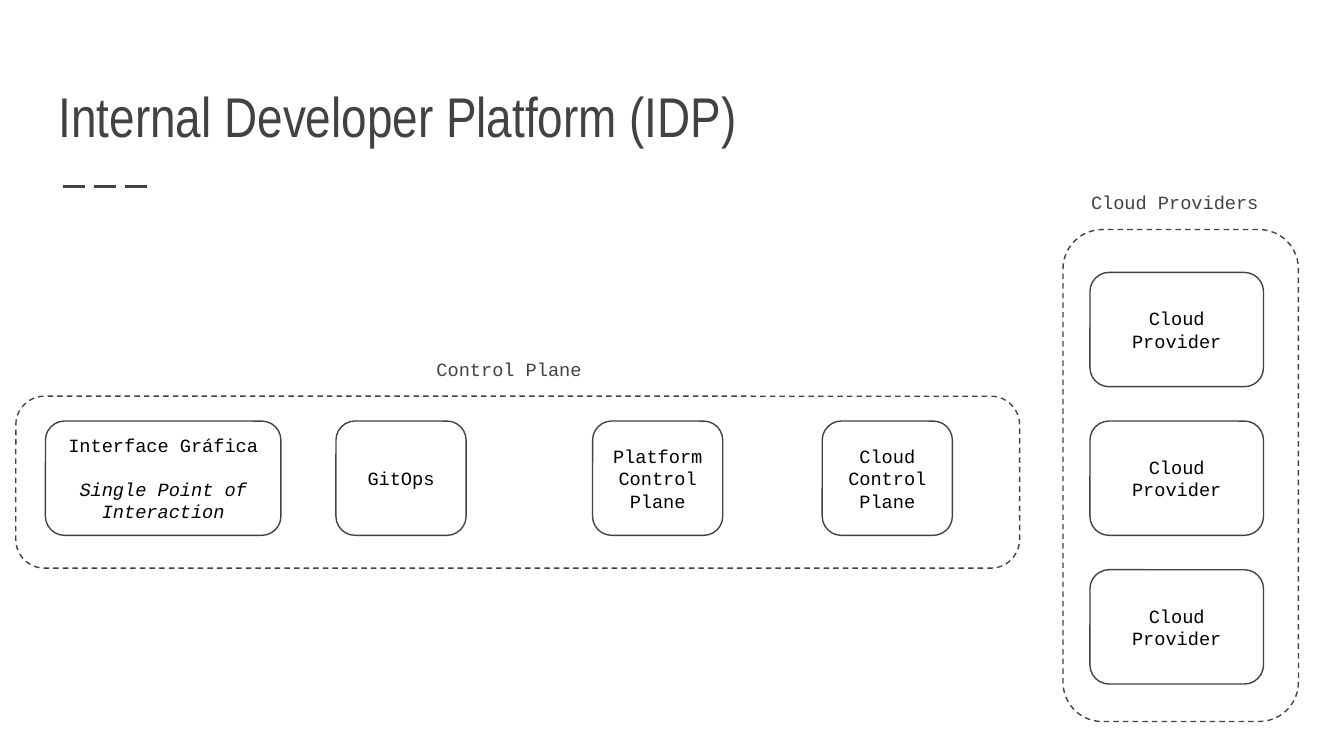
from dataclasses import dataclass

import pptx
import pptx.dml.color
import pptx.enum.dml
import pptx.enum.shapes
import pptx.enum.text
import pptx.oxml.ns
import pptx.shapes.autoshape
import pptx.slide
import pptx.text.text
import pptx.util
from lxml import etree

Cm = pptx.util.Cm
Pt = pptx.util.Pt
Color = pptx.dml.color.RGBColor
Align = pptx.enum.text.PP_ALIGN
Anchor = pptx.enum.text.MSO_ANCHOR
Dash = pptx.enum.dml.MSO_LINE


@dataclass(frozen=True)
class Theme:
    ink: Color = Color(0x42, 0x42, 0x42)
    black: Color = Color(0, 0, 0)
    white: Color = Color(0xFF, 0xFF, 0xFF)
    head_font: str = "Arial Narrow"
    code_font: str = "Courier New"
    head_size: float = 30
    code_size: float = 10
    thin: float = 0.75
    thick: float = 1.5
    inset: float = 0.25
    curve: float = 0.167


@dataclass(frozen=True)
class Place:
    left: float
    top: float
    width: float
    height: float

    def cm(self) -> list[pptx.util.Length]:
        return [Cm(n) for n in (self.left, self.top, self.width, self.height)]


@dataclass(frozen=True)
class Box:
    place: Place
    text: str
    note: str = ""
    filled: bool = False


@dataclass(frozen=True)
class Group:
    frame: Place
    label: str
    spot: Place


THEME = Theme()
BOX_HIGH = 2.16
ROW_TOP = 7.96
STACK_STEP = 2.81

STEPS = [
    Box(Place(0.86, ROW_TOP, 4.45, BOX_HIGH), "Interface Gráfica",
        "Single Point of Interaction"),
    *[Box(Place(left, ROW_TOP, 2.46, BOX_HIGH), text) for left, text in (
        (6.35, "GitOps"),
        (11.2, "Platform Control Plane"),
        (15.54, "Cloud Control Plane"),
    )],
]
CLOUDS = [
    Box(Place(20.6, ROW_TOP + i * STACK_STEP, 3.28, BOX_HIGH),
        "Cloud Provider", filled=True)
    for i in (-1, 0, 1)
]
GROUPS = [
    Group(Place(0.3, 7.49, 18.97, 3.25), "Control Plane",
          Place(8, 6.55, 3.56, 0.94)),
    Group(Place(20.09, 4.34, 4.45, 9.3), "Cloud Providers",
          Place(20.37, 3.4, 3.76, 0.94)),
]


def add_run(para: pptx.text.text._Paragraph, text: str, color: Color,
            name: str = THEME.code_font, size: float = THEME.code_size,
            slant: bool = False) -> None:
    run = para.add_run()
    run.text = text
    run.font.name = name
    run.font.size = Pt(size)
    run.font.color.rgb = color
    run.font.italic = slant


def set_frame(frame: pptx.text.text.TextFrame, anchor: Anchor) -> None:
    frame.word_wrap = True
    frame.vertical_anchor = anchor
    frame.margin_left = frame.margin_right = Cm(THEME.inset)
    frame.margin_top = frame.margin_bottom = Cm(THEME.inset)


def draw_round(slide: pptx.slide.Slide, place: Place,
               dash: Dash = Dash.SOLID) -> pptx.shapes.autoshape.Shape:
    """Draw an unfilled rounded rectangle with a thin outline."""
    kind = pptx.enum.shapes.MSO_SHAPE.ROUNDED_RECTANGLE
    shape = slide.shapes.add_shape(kind, *place.cm())
    shape.adjustments[0] = THEME.curve
    shape.shadow.inherit = False
    shape.fill.background()
    shape.line.color.rgb = THEME.ink
    shape.line.width = Pt(THEME.thin)
    shape.line.dash_style = dash
    return shape


def draw_box(slide: pptx.slide.Slide, box: Box) -> None:
    shape = draw_round(slide, box.place)
    if box.filled:
        shape.fill.solid()
        shape.fill.fore_color.rgb = THEME.white
    frame = shape.text_frame
    set_frame(frame, Anchor.MIDDLE)
    para = frame.paragraphs[0]
    para.alignment = Align.CENTER
    add_run(para, box.text, THEME.black)
    if box.note:
        para = frame.add_paragraph()
        para.alignment = Align.CENTER
        para.space_before = Pt(11.3)
        add_run(para, box.note, THEME.black, slant=True)


def draw_group(slide: pptx.slide.Slide, group: Group) -> None:
    draw_round(slide, group.frame, Dash.DASH)
    frame = slide.shapes.add_textbox(*group.spot.cm()).text_frame
    set_frame(frame, Anchor.TOP)
    add_run(frame.paragraphs[0], group.label, THEME.ink)


def draw_title(slide: pptx.slide.Slide, text: str) -> None:
    title = slide.shapes.title
    title.left, title.top, title.width, title.height = Place(
        0.86, 1.04, 23.67, 2.03).cm()
    set_frame(title.text_frame, Anchor.BOTTOM)
    para = title.text_frame.paragraphs[0]
    para.alignment = Align.LEFT
    add_run(para, text, THEME.ink, THEME.head_font, THEME.head_size)


def draw_rule(slide: pptx.slide.Slide) -> None:
    """Draw the short dashed line below the title."""
    kind = pptx.enum.shapes.MSO_CONNECTOR.STRAIGHT
    rule = slide.shapes.add_connector(
        kind, Cm(1.19), Cm(3.53), Cm(2.9), Cm(3.53))
    rule.line.color.rgb = THEME.ink
    rule.line.width = Pt(THEME.thick)
    rule.line.dash_style = Dash.LONG_DASH
    etree.SubElement(rule._element.spPr, pptx.oxml.ns.qn("a:effectLst"))


def main() -> None:
    deck = pptx.Presentation()
    deck.slide_width, deck.slide_height = Cm(25.4), Cm(14.29)
    slide = deck.slides.add_slide(deck.slide_layouts[5])
    draw_rule(slide)
    draw_title(slide, "Internal Developer Platform (IDP)")
    for box in STEPS + CLOUDS:
        draw_box(slide, box)
    for group in GROUPS:
        draw_group(slide, group)
    deck.save("out.pptx")


if __name__ == "__main__":
    main()
